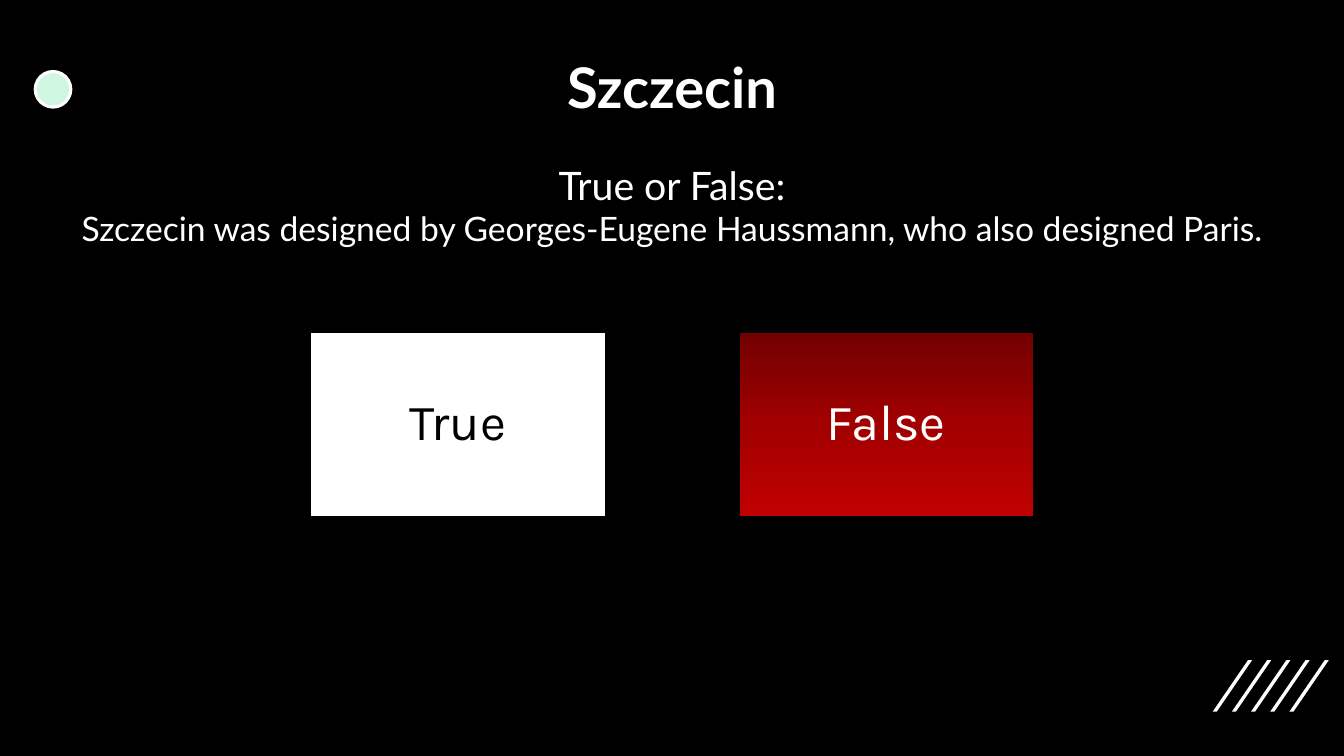
"""Build the Szczecin true-or-false quiz slide."""
from copy import deepcopy
from pptx import Presentation
from pptx.dml.color import RGBColor as RGB
from pptx.enum.shapes import MSO_SHAPE as SHAPE
from pptx.enum.text import MSO_ANCHOR as ANCHOR, PP_ALIGN as ALIGN
from pptx.util import Pt

HUES = {
    "black": "000000", "white": "FFFFFF", "mint": "CFF7E1",
    "dark": "720000", "mid": "A20000", "red": "C00000",
}


def hue(name):
    return RGB.from_string(HUES[name])


def write(para, text, size, face, color, bold=False):
    para.alignment = ALIGN.CENTER
    run = para.add_run()
    run.text = text
    run.font.size = Pt(size)
    run.font.name = face
    run.font.bold = bold
    run.font.color.rgb = hue(color)


deck = Presentation()
deck.slide_width, deck.slide_height = Pt(960), Pt(540)
slide = deck.slides.add_slide(deck.slide_layouts[6])
slide.background.fill.solid()
slide.background.fill.fore_color.rgb = hue("black")
shapes = slide.shapes

top, base = Pt(471.6), Pt(508.3)
for i in range(5):
    left = 866.2 + 13.7 * i
    pen = shapes.build_freeform(Pt(left + 2.9), base)
    pen.add_line_segments(
        [(Pt(left), base), (Pt(left + 25.2), top), (Pt(left + 28.1), top)])
    slash = pen.convert_to_shape()
    slash.shadow.inherit = False
    slash.fill.solid()
    slash.fill.fore_color.rgb = hue("white")
    slash.line.fill.background()

dot = shapes.add_shape(SHAPE.OVAL, Pt(25.2), Pt(51.1), Pt(25.4), Pt(25.4))
dot.shadow.inherit = False
dot.fill.solid()
dot.fill.fore_color.rgb = hue("mint")
dot.line.color.rgb = hue("white")
dot.line.width = Pt(2.25)

title = shapes.add_textbox(Pt(269), Pt(33.8), Pt(422), Pt(55.4)).text_frame
title.word_wrap = True
write(title.paragraphs[0], "Szczecin", 40, "Lato", "white", True)

quiz = shapes.add_textbox(Pt(6.3), Pt(111.6), Pt(947.5), Pt(70.6)).text_frame
quiz.word_wrap = True
write(quiz.paragraphs[0], "True or False:", 28, "Lato", "white")
write(quiz.add_paragraph(),
      "Szczecin was designed by Georges-Eugene Haussmann, who also designed Paris.",
      24, "Lato", "white")

for text, left, ink, tints in [
    ("True", 222, "black", ["white"]),
    ("False", 527.8, "white", ["dark", "mid", "red"]),
]:
    card = shapes.add_shape(SHAPE.RECTANGLE, Pt(left), Pt(237.6), Pt(210.4), Pt(131.2))
    card.shadow.inherit = False
    card.line.color.rgb = hue("black")
    card.line.width = Pt(1)
    fill = card.fill
    if len(tints) == 1:
        fill.solid()
        fill.fore_color.rgb = hue(tints[0])
    else:
        fill.gradient()
        fill.gradient_angle = 270
        stops = card.element.spPr.gradFill.gsLst
        stops.insert(1, deepcopy(stops[0]))
        for i, (stop, tint) in enumerate(zip(fill.gradient_stops, tints)):
            stop.position = i / 2
            stop.color.rgb = hue(tint)
    frame = card.text_frame
    frame.word_wrap = True
    frame.vertical_anchor = ANCHOR.MIDDLE
    frame.margin_left = frame.margin_right = Pt(16.6)
    frame.margin_top = frame.margin_bottom = Pt(16.6)
    frame.paragraphs[0].line_spacing = 0.9
    write(frame.paragraphs[0], text, 36, "Karla", ink)

deck.save("out.pptx")
